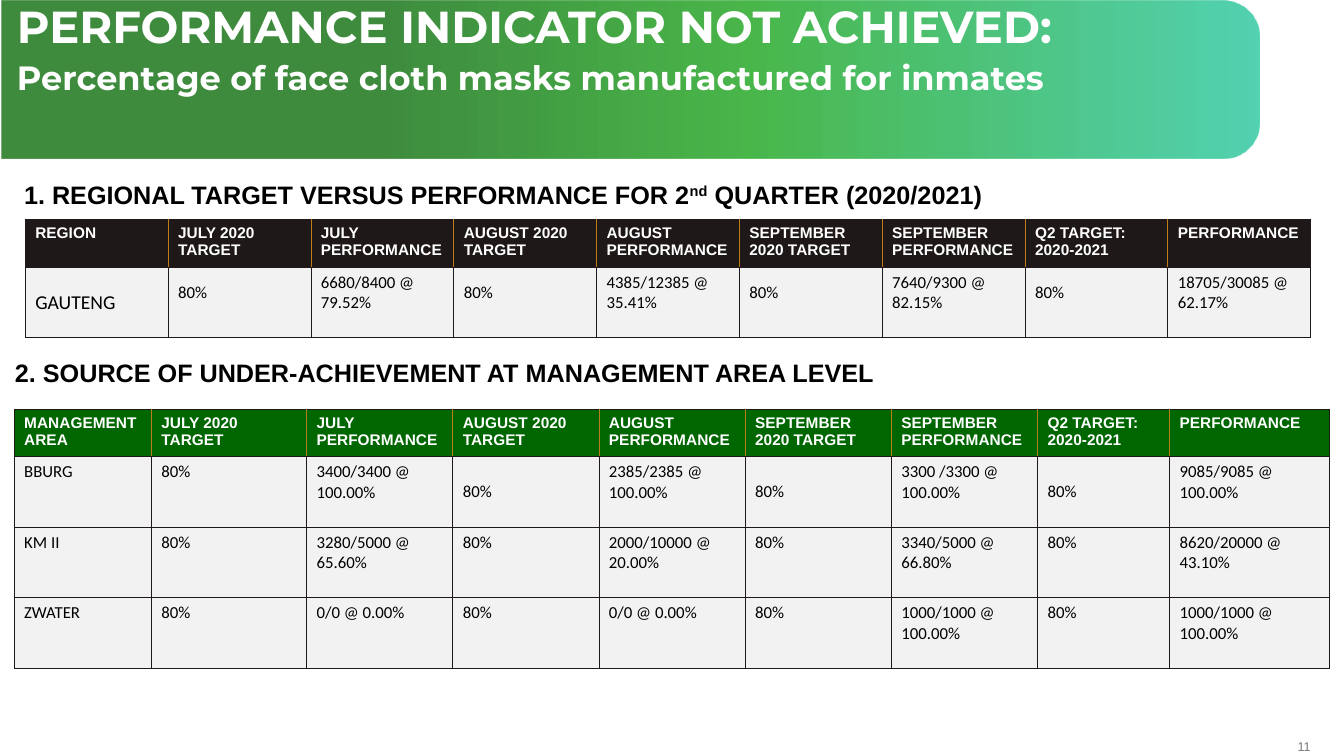
from dataclasses import dataclass
from typing import List, Set, Tuple

from lxml import etree
from pptx import Presentation
from pptx.dml.color import RGBColor
from pptx.enum.shapes import MSO_SHAPE as Shape
from pptx.enum.text import MSO_ANCHOR as Anchor, PP_ALIGN as Align
from pptx.oxml.ns import qn
from pptx.util import Inches, Pt

BLACK = RGBColor(0x00, 0x00, 0x00)
WHITE = RGBColor(0xFF, 0xFF, 0xFF)
GREY = RGBColor(0x77, 0x78, 0x7B)
INK = RGBColor(0x1E, 0x19, 0x18)
ORANGE = RGBColor(0xBF, 0x7B, 0x17)
GREEN = RGBColor(0x00, 0x66, 0x00)
MID_GREEN = RGBColor(0x00, 0x99, 0x00)
TEAL = RGBColor(0x00, 0xBC, 0x8D)
PALE = RGBColor(0xF2, 0xF2, 0xF2)

BAND_STOPS = [(30, GREEN, 75), (59, MID_GREEN, 71), (100, TEAL, 67)]
HEADER_HEIGHT, ROW_HEIGHT = 0.47, 0.7
PERIOD_HEADS = ["JULY 2020\vTARGET", "JULY PERFORMANCE", "AUGUST 2020\vTARGET",
                "AUGUST PERFORMANCE", "SEPTEMBER 2020 TARGET",
                "SEPTEMBER PERFORMANCE", "Q2 TARGET: 2020-2021", "PERFORMANCE"]


@dataclass
class Result:
    place: str
    july: str
    august: str
    september: str
    quarter: str
    size: int = 12

    def cells(self) -> List[str]:
        texts = [self.place]
        for value in (self.july, self.august, self.september, self.quarter):
            texts += ["80%", value]
        return texts


@dataclass
class ResultTable:
    left: float
    top: float
    widths: List[float]
    head: str
    head_fill: RGBColor
    results: List[Result]
    middle: Set[Tuple[int, int]]
    unpadded: Set[Tuple[int, int]]


@dataclass
class Label:
    left: float
    top: float
    width: float
    height: float
    lines: List[str]
    sizes: List[int]
    font: str
    color: RGBColor
    bold: bool = True


TITLE = Label(0.07, 0, 11.98, 0.57,
              ["PERFORMANCE INDICATOR NOT ACHIEVED:",
               "Percentage of face cloth masks manufactured for inmates"],
              [32, 24], "Montserrat", WHITE)
REGION_HEADING = Label(0.14, 1.73, 9.76, 0.4,
                       ["1. REGIONAL TARGET VERSUS PERFORMANCE FOR 2"],
                       [18], "Arial", BLACK)
AREA_HEADING = Label(0.05, 3.5, 9.66, 0.4,
                     ["2. SOURCE OF UNDER-ACHIEVEMENT AT MANAGEMENT AREA LEVEL"],
                     [18], "Arial", BLACK)
PAGE_NUMBER = Label(12.61, 7.33, 0.39, 0.15, ["11"], [9], "Arial", GREY, False)

REGION_TABLE = ResultTable(
    0.25, 2.18, [12.75 / 9] * 9, "REGION", INK,
    [Result("GAUTENG", "6680/8400 @ 79.52%", "4385/12385 @ 35.41%",
            "7640/9300 @ 82.15%", "18705/30085 @ 62.17%", 14)],
    {(1, col) for col in range(9)}, {(1, 0)})
AREA_TABLE = ResultTable(
    0.14, 4.06, [1.36, 1.54] + [1.45] * 5 + [1.31, 1.58], "MANAGEMENT AREA", GREEN,
    [Result("BBURG", "3400/3400 @ 100.00%", "2385/2385 @ 100.00%",
            "3300 /3300 @ 100.00%", "9085/9085 @ 100.00%"),
     Result("KM II", "3280/5000 @ 65.60%", "2000/10000 @ 20.00%",
            "3340/5000 @ 66.80%", "8620/20000 @ 43.10%"),
     Result("ZWATER", "0/0 @ 0.00%", "0/0 @ 0.00%",
            "1000/1000 @ 100.00%", "1000/1000 @ 100.00%")],
    {(1, 3), (1, 5), (1, 7)}, {(1, 3), (1, 5), (1, 7)})


def style(r, font: str, size: int, color: RGBColor, bold: bool) -> None:
    r.font.name, r.font.size, r.font.bold = font, Pt(size), bold
    r.font.color.rgb = color


def add_color(parent, color: RGBColor):
    return etree.SubElement(parent, qn("a:srgbClr"), val=str(color))


def add_band(s) -> None:
    sp = s.shapes.add_shape(Shape.ROUND_2_SAME_RECTANGLE, Inches(5.47), Inches(-5.45),
                            Inches(1.57), Inches(12.48))
    sp.rotation = 90
    sp.adjustments[0], sp.adjustments[1] = 0.233, 0
    sp.shadow.inherit = False
    sp.line.fill.background()
    sp.fill.background()
    no_fill = sp._element.spPr.find(qn("a:noFill"))
    grad = etree.Element(qn("a:gradFill"), rotWithShape="1")
    stops = etree.SubElement(grad, qn("a:gsLst"))
    for position, color, opacity in BAND_STOPS:
        stop = etree.SubElement(stops, qn("a:gs"), pos=str(position * 1000))
        etree.SubElement(add_color(stop, color), qn("a:alpha"), val=str(opacity * 1000))
    etree.SubElement(grad, qn("a:lin"), ang=str(270 * 60000), scaled="0")
    sp._element.spPr.replace(no_fill, grad)


def add_label(s, label: Label):
    sp = s.shapes.add_textbox(Inches(label.left), Inches(label.top),
                              Inches(label.width), Inches(label.height))
    tf = sp.text_frame
    tf.word_wrap = True
    tf.text = "\n".join(label.lines)
    for p, size in zip(tf.paragraphs, label.sizes):
        style(p.runs[0], label.font, size, label.color, label.bold)
    return tf


def set_borders(cell, left: RGBColor, right: RGBColor) -> None:
    tcPr = cell._tc.get_or_add_tcPr()
    sides = [("a:lnL", left), ("a:lnR", right), ("a:lnT", INK), ("a:lnB", INK)]
    for i, (tag, color) in enumerate(sides):
        ln = etree.Element(qn(tag), w=str(Pt(0.5)))
        add_color(etree.SubElement(ln, qn("a:solidFill")), color)
        tcPr.insert(i, ln)


def add_results(s, spec_table: ResultTable) -> None:
    rows = [[spec_table.head] + PERIOD_HEADS] + [x.cells() for x in spec_table.results]
    last = len(rows[0]) - 1
    height = HEADER_HEIGHT + ROW_HEIGHT * len(spec_table.results)
    table = s.shapes.add_table(len(rows), last + 1, Inches(spec_table.left),
                               Inches(spec_table.top), Inches(sum(spec_table.widths)),
                               Inches(height)).table
    for column, width in zip(table.columns, spec_table.widths):
        column.width = Inches(width)
    for i, texts in enumerate(rows):
        table.rows[i].height = Inches(ROW_HEIGHT if i else HEADER_HEIGHT)
        for j, text in enumerate(texts):
            cell = table.cell(i, j)
            cell.text_frame.text = text
            cell.fill.solid()
            cell.fill.fore_color.rgb = PALE if i else spec_table.head_fill
            cell.vertical_anchor = Anchor.MIDDLE if (i, j) in spec_table.middle else Anchor.TOP
            if i and (i, j) not in spec_table.unpadded:
                cell.margin_bottom = Inches(0.25)
            for r in cell.text_frame.paragraphs[0].runs:
                if i:
                    size = spec_table.results[i - 1].size if j == 0 else 12
                    style(r, "Calibri", size, BLACK, False)
                else:
                    style(r, "Arial", 11, WHITE, True)
            set_borders(cell, INK if i or j == 0 else ORANGE,
                        INK if i or j == last else ORANGE)


def main() -> None:
    prs = Presentation()
    prs.slide_width, prs.slide_height = Inches(13.33), Inches(7.5)
    s = prs.slides.add_slide(prs.slide_layouts[6])

    tf = add_label(s, PAGE_NUMBER)
    tf.margin_left = tf.margin_right = tf.margin_top = tf.margin_bottom = 0
    tf.vertical_anchor = Anchor.MIDDLE
    tf.paragraphs[0].alignment = Align.RIGHT

    add_band(s)
    tf = add_label(s, TITLE)
    for p in tf.paragraphs:
        p.line_spacing = 0.9
    tf.paragraphs[0].space_after = Pt(6)

    p = add_label(s, REGION_HEADING).paragraphs[0]
    for text, baseline in [("nd", 30000), (" QUARTER (2020/2021)", 0)]:
        r = p.add_run()
        r.text = text
        style(r, "Arial", 18, BLACK, True)
        r._r.get_or_add_rPr().set("baseline", str(baseline))
    add_label(s, AREA_HEADING)

    add_results(s, REGION_TABLE)
    add_results(s, AREA_TABLE)
    prs.save("out.pptx")


if __name__ == "__main__":
    main()
